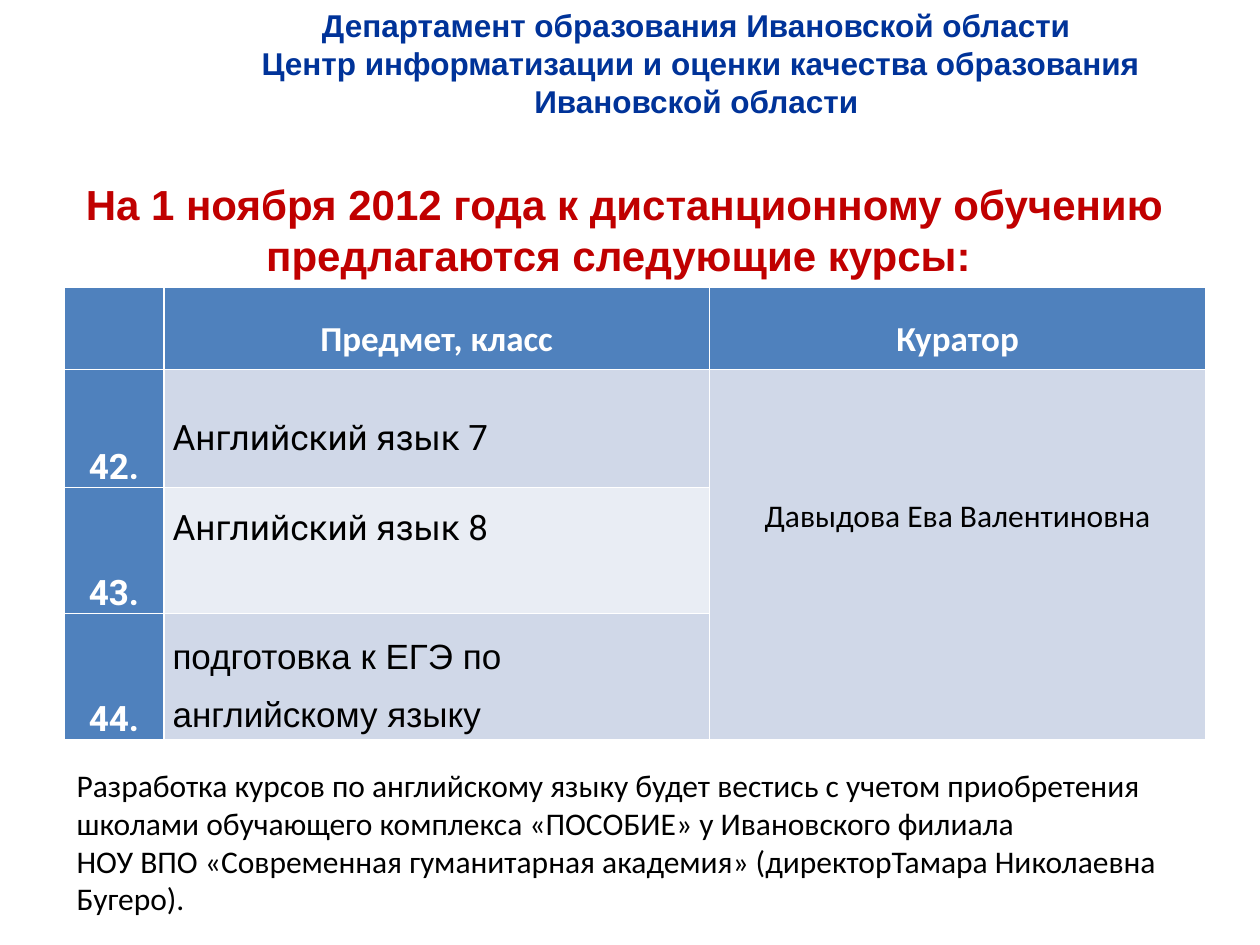
from dataclasses import dataclass

from pptx import Presentation
from pptx.dml.color import RGBColor
from pptx.enum.text import MSO_ANCHOR, PP_ALIGN
from pptx.util import Pt

TOP, MIDDLE, BOTTOM = MSO_ANCHOR.TOP, MSO_ANCHOR.MIDDLE, MSO_ANCHOR.BOTTOM
LEFT, CENTER = PP_ALIGN.LEFT, PP_ALIGN.CENTER
TITLE_ONLY = 5


@dataclass(frozen=True)
class Theme:
    navy: str = "003399"
    red: str = "C00000"
    white: str = "FFFFFF"
    black: str = "000000"
    blue: str = "4F81BD"
    band_dark: str = "D0D8E8"
    band_light: str = "E9EDF4"
    title_size: int = 24
    table_size: int = 20
    text_size: int = 18
    heading_font: str = "Arial"
    body_font: str = "Calibri"
    course_font: str = "Roboto"


THEME = Theme()
COLUMN_WIDTHS = (56.9, 311.8, 283.7)
ROW_HEIGHTS = (46.8, 67.7, 72, 72)
COURSES = (
    ("42.", "Английский язык 7", THEME.course_font, MIDDLE),
    ("43.", "Английский язык 8", THEME.course_font, TOP),
    ("44.", "подготовка к ЕГЭ по английскому языку", THEME.heading_font, MIDDLE),
)


def write_text(frame, *lines, font=THEME.body_font, size=THEME.text_size,
               color=THEME.black, bold=False, align=LEFT, spacing=1.0):
    frame.word_wrap = True
    for index, line in enumerate(lines):
        para = frame.add_paragraph() if index else frame.paragraphs[0]
        para.alignment = align
        para.line_spacing = spacing
        span = para.add_run()
        span.text = line
        span.font.name = font
        span.font.size = Pt(size)
        span.font.bold = bold
        span.font.color.rgb = RGBColor.from_string(color)


def add_text_box(page, left, top, width, height, *lines, **style):
    box = page.shapes.add_textbox(Pt(left), Pt(top), Pt(width), Pt(height))
    write_text(box.text_frame, *lines, **style)


def set_title(page, left, top, width, height, text, **style):
    title = page.shapes.title
    title.left, title.top = Pt(left), Pt(top)
    title.width, title.height = Pt(width), Pt(height)
    title.text_frame.vertical_anchor = TOP
    write_text(title.text_frame, text, **style)


def fill_cell(cell, text, fill, anchor=MIDDLE, inset=3, bottom=0, **style):
    cell.fill.solid()
    cell.fill.fore_color.rgb = RGBColor.from_string(fill)
    cell.vertical_anchor = anchor
    cell.margin_left = cell.margin_right = Pt(inset)
    cell.margin_top, cell.margin_bottom = Pt(0), Pt(bottom)
    if text:
        write_text(cell.text_frame, text, spacing=1.5, **style)


def add_course_table(page, left, top):
    frame = page.shapes.add_table(
        len(ROW_HEIGHTS), len(COLUMN_WIDTHS), Pt(left), Pt(top),
        Pt(sum(COLUMN_WIDTHS)), Pt(sum(ROW_HEIGHTS)))
    table = frame.table
    for column, width in zip(table.columns, COLUMN_WIDTHS):
        column.width = Pt(width)
    for row, height in zip(table.rows, ROW_HEIGHTS):
        row.height = Pt(height)

    header = dict(size=THEME.table_size, color=THEME.white, bold=True, align=CENTER)
    for index, text in enumerate(("", "Предмет, класс", "Куратор")):
        fill_cell(table.cell(0, index), text, THEME.blue, **header)

    for row, (number, course, font, anchor) in enumerate(COURSES, start=1):
        band = THEME.band_dark if row % 2 else THEME.band_light
        fill_cell(table.cell(row, 0), number, THEME.blue, anchor=BOTTOM,
                  font=THEME.course_font, **header)
        fill_cell(table.cell(row, 1), course, band, anchor=anchor, inset=5,
                  font=font, size=THEME.table_size)

    curator = table.cell(1, 2)
    curator.merge(table.cell(len(COURSES), 2))
    fill_cell(curator, "Давыдова Ева Валентиновна", THEME.band_dark,
              bottom=54, align=CENTER)


def main():
    deck = Presentation()
    deck.slide_width, deck.slide_height = Pt(720), Pt(540)
    page = deck.slides.add_slide(deck.slide_layouts[TITLE_ONLY])

    add_text_box(
        page, 117.4, 0, 560.9, 98.6,
        "Департамент образования Ивановской области",
        " Центр информатизации и оценки качества образования Ивановской области",
        font=THEME.heading_font, color=THEME.navy, bold=True, align=CENTER)
    set_title(
        page, 25.2, 98.6, 663.1, 65.5,
        "На 1 ноября 2012 года к дистанционному обучению предлагаются следующие курсы: ",
        font=THEME.heading_font, size=THEME.title_size, color=THEME.red,
        bold=True, align=CENTER)
    add_course_table(page, 36.7, 164.2)
    add_text_box(
        page, 36.7, 434.2, 663.1, 94.3,
        "Разработка курсов по английскому языку будет вестись с учетом приобретения "
        "школами обучающего комплекса «ПОСОБИЕ» у Ивановского филиала",
        "НОУ ВПО «Современная гуманитарная академия» "
        "(директорТамара Николаевна Бугеро).")
    deck.save("out.pptx")


if __name__ == "__main__":
    main()
